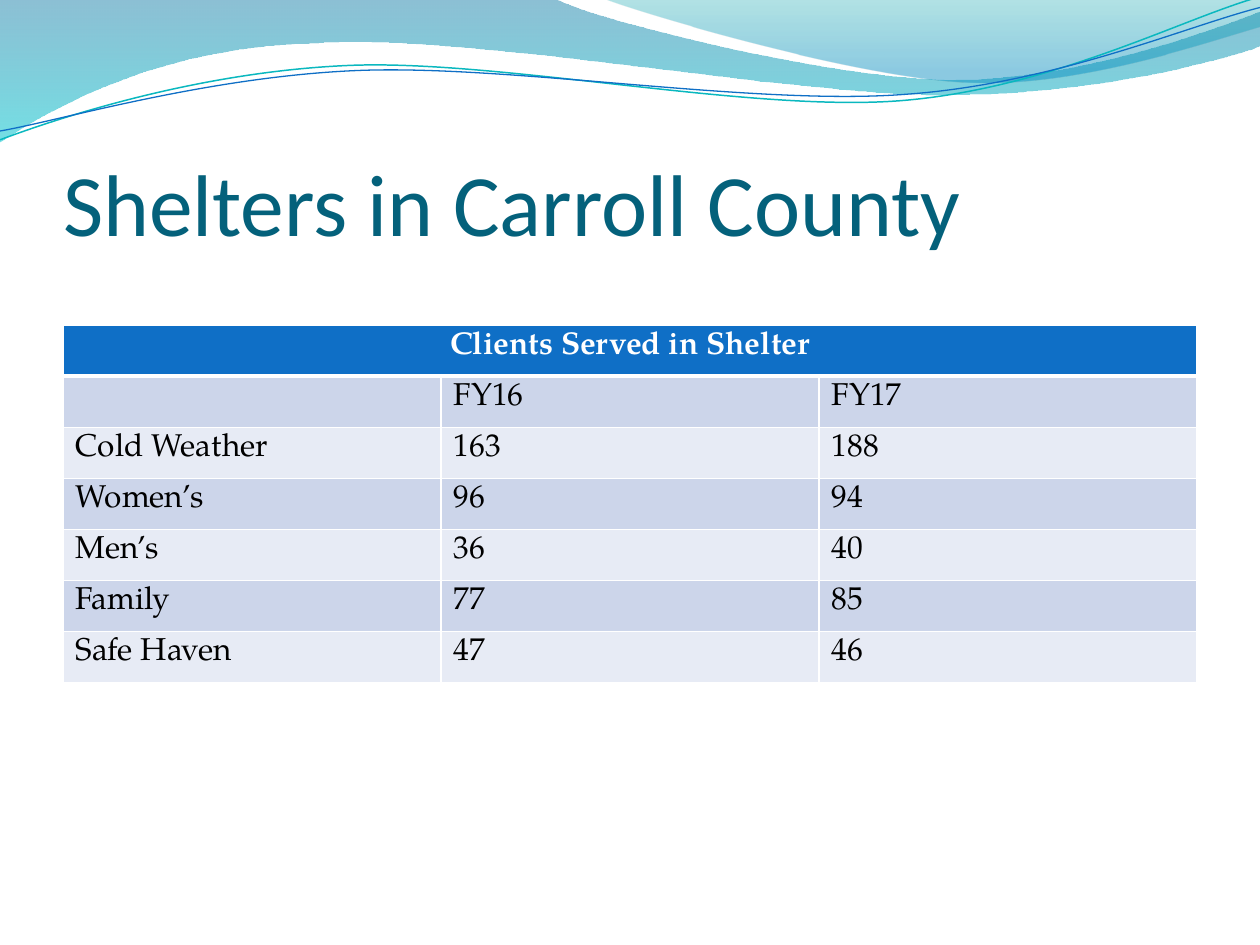
from math import cos, radians, sin

from lxml.etree import SubElement
from pptx import Presentation
from pptx.dml.color import RGBColor
from pptx.enum.text import MSO_ANCHOR, MSO_AUTO_SIZE, PP_ALIGN
from pptx.oxml.ns import qn
from pptx.util import Inches, Pt

COLORS = {
    "title": "04617B", "header": "0F6FC6", "white": "FFFFFF", "text": "000000",
    "band_dark": "CCD5EA", "band_light": "E7EBF5",
    "wave_blue": "0074A1", "wave_cyan": "00C6CF",
    "crest_teal": "00A1A9", "crest_blue": "008BBF", "line_teal": "0AB8BF",
}
TITLE_FONT, TABLE_FONT = "Calibri", "TeX Gyre Pagella"

# The slide is a grid of one-inch columns and rows
COLS, ROWS = 10, 7.5
UNITS = 1000  # outline units per inch
TILT = -2.7  # degrees, of the thin lines

# Each outline: a start point, then line ends (2 numbers) or curves (6 numbers)
WAVE = [(0, 0), (4.4, -.01), (4.76, .17, 6.64, .63, 7.58, .63),
        (8.53, .63, 9.58, .26, 10, .09), (10.01, .36),
        (9.83, .44, 8.7, .76, 7.46, .75), (6.22, .75, 3.82, .28, 2.57, .34),
        (1.29, .36, .46, .83, -.01, 1.13), (0, 0)]
CREST = [(4.79, -.01), (5.09, .11, 6.82, .62, 7.69, .65),
         (8.56, .69, 9.61, .32, 10, .21), (10, 0), (4.79, -.01)]
TEAL_LINE = [(0, 1.11), (.48, .93, 1.58, .57, 2.77, .52),
             (3.95, .47, 5.93, .89, 7.13, .8), (8.33, .71, 9.38, .15, 9.98, -.02)]
BLUE_LINE = [(0, 1.04), (.47, .96, 1.64, .61, 2.83, .56),
             (4.03, .51, 5.97, .84, 7.17, .75), (8.36, .67, 9.41, .21, 10, .06)]

SHELTERS = [("", "FY16", "FY17"), ("Cold Weather", "163", "188"),
            ("Women’s", "96", "94"), ("Men’s", "36", "40"),
            ("Family", "77", "85"), ("Safe Haven", "47", "46")]


def rgb(name):
    return RGBColor.from_string(COLORS[name])


def turn(point, center, degrees):
    dx, dy = point[0] - center[0], point[1] - center[1]
    c, s = cos(radians(degrees)), sin(radians(degrees))
    return center[0] + dx * c - dy * s, center[1] + dx * s + dy * c


def add_outline(slide, box, outline, close, center=(0, 0), tilt=0):
    """Draw an outline with true curves; a tilted one is laid flat, then rotated."""
    left, top = box[:2]
    points = [turn(part[i:i + 2], center, -tilt)
              for part in outline for i in range(0, len(part), 2)]
    points = [(round((left + x) * UNITS), round((top + y) * UNITS)) for x, y in points]
    builder = slide.shapes.build_freeform(*points[0], scale=Inches(1) / UNITS)
    builder.add_line_segments(points[1:], close=close)
    sp = builder.convert_to_shape()
    sp.shadow.inherit = False
    sp.rotation = tilt % 360
    # Join each three steps of a curve into one cubic segment
    steps = iter(list(sp._element.iter(qn("a:lnTo"))))
    for part in outline[1:]:
        group = [next(steps) for _ in range(len(part) // 2)]
        if len(group) == 3:
            curve = SubElement(group[0].getparent(), qn("a:cubicBezTo"))
            group[0].addprevious(curve)
            for step in group:
                curve.append(step[0])
                step.getparent().remove(step)
    return sp


def add_waves(slide, box):
    # Translucent gradient bands: (position, colour, opacity in percent)
    for outline, stops in (
            (WAVE, [(0, "wave_blue", 45), (1, "wave_cyan", 55)]),
            (CREST, [(0, "crest_teal", 30), (.8, "crest_blue", 45)])):
        sp = add_outline(slide, box, outline, True)
        sp.line.fill.background()
        sp.fill.gradient()
        sp.fill.gradient_angle = 270
        for stop, (position, color, _) in zip(sp.fill.gradient_stops, stops):
            stop.position = position
            stop.color.rgb = rgb(color)
        clrs = sp._element.spPr.iter(qn("a:srgbClr"))
        for clr, (_, _, opacity) in zip(clrs, stops):
            SubElement(clr, qn("a:alpha"), val=str(opacity * 1000))
    # Thin tilted lines
    for outline, center, color, width in (
            (TEAL_LINE, (4.99, .58), "line_teal", .85),
            (BLUE_LINE, (5, .59), "header", .75)):
        sp = add_outline(slide, box, outline, False, center, TILT)
        sp.fill.background()
        sp.line.color.rgb = rgb(color)
        sp.line.width = Pt(width)


def add_title(slide, box, text):
    title = slide.shapes.title
    title.left, title.top, title.width, title.height = map(Inches, box)
    slide.shapes._spTree.append(title._element)  # in front of the waves
    tf = title.text_frame
    tf.text = text
    tf.auto_size = MSO_AUTO_SIZE.NONE
    tf.word_wrap = True
    tf.vertical_anchor = MSO_ANCHOR.BOTTOM
    tf.margin_left = tf.margin_right = tf.margin_bottom = 0
    tf.margin_top = Inches(.05)
    p = tf.paragraphs[0]
    p.alignment = PP_ALIGN.LEFT
    p.font.name, p.font.size = TITLE_FONT, Pt(50)
    p.font.color.rgb = rgb("title")


def set_borders(cell, top, bottom):
    tc_pr = cell._tc.get_or_add_tcPr()
    for i, (side, width) in enumerate((("L", 1), ("R", 1), ("T", top), ("B", bottom))):
        ln = SubElement(tc_pr, qn(f"a:ln{side}"), w=str(Pt(width)))
        fill = SubElement(ln, qn("a:solidFill"))
        SubElement(fill, qn("a:srgbClr"), val=COLORS["white"])
        tc_pr.insert(i, ln)  # borders come before the fill


def style_cell(cell, text, fill, color="text", bold=False, align=PP_ALIGN.LEFT):
    cell.text = text
    cell.fill.solid()
    cell.fill.fore_color.rgb = rgb(fill)
    cell.margin_left = cell.margin_right = Inches(.1)
    cell.margin_top = cell.margin_bottom = Inches(.05)
    p = cell.text_frame.paragraphs[0]
    p.alignment = align
    p.font.name, p.font.size, p.font.bold = TABLE_FONT, Pt(18), bold
    p.font.color.rgb = rgb(color)


def add_shelter_table(slide, box, heading, rows):
    n_rows, n_cols = len(rows) + 1, len(rows[0])
    table = slide.shapes.add_table(n_rows, n_cols, *map(Inches, box)).table
    # Header across all columns
    for c in range(n_cols):
        style_cell(table.cell(0, c), "" if c else heading, "header", "white", True,
                   PP_ALIGN.CENTER)
        set_borders(table.cell(0, c), 1, 3)
    table.cell(0, 0).merge(table.cell(0, n_cols - 1))
    # Banded body
    for r, values in enumerate(rows, 1):
        for c, value in enumerate(values):
            style_cell(table.cell(r, c), value, "band_dark" if r % 2 else "band_light")
            set_borders(table.cell(r, c), 3 if r == 1 else 1, 1)


def main():
    prs = Presentation()
    prs.slide_width, prs.slide_height = Inches(COLS), Inches(ROWS)
    slide = prs.slides.add_slide(prs.slide_layouts[5])
    margin = COLS * .05
    width = COLS - 2 * margin
    add_waves(slide, (0, 0, COLS, 1.13))
    add_title(slide, (margin, .77, width, 1.25), "Shelters in Carroll County")
    add_shelter_table(slide, (margin, 2.58, width, 2.84), "Clients Served in Shelter", SHELTERS)
    prs.save("out.pptx")


if __name__ == "__main__":
    main()
